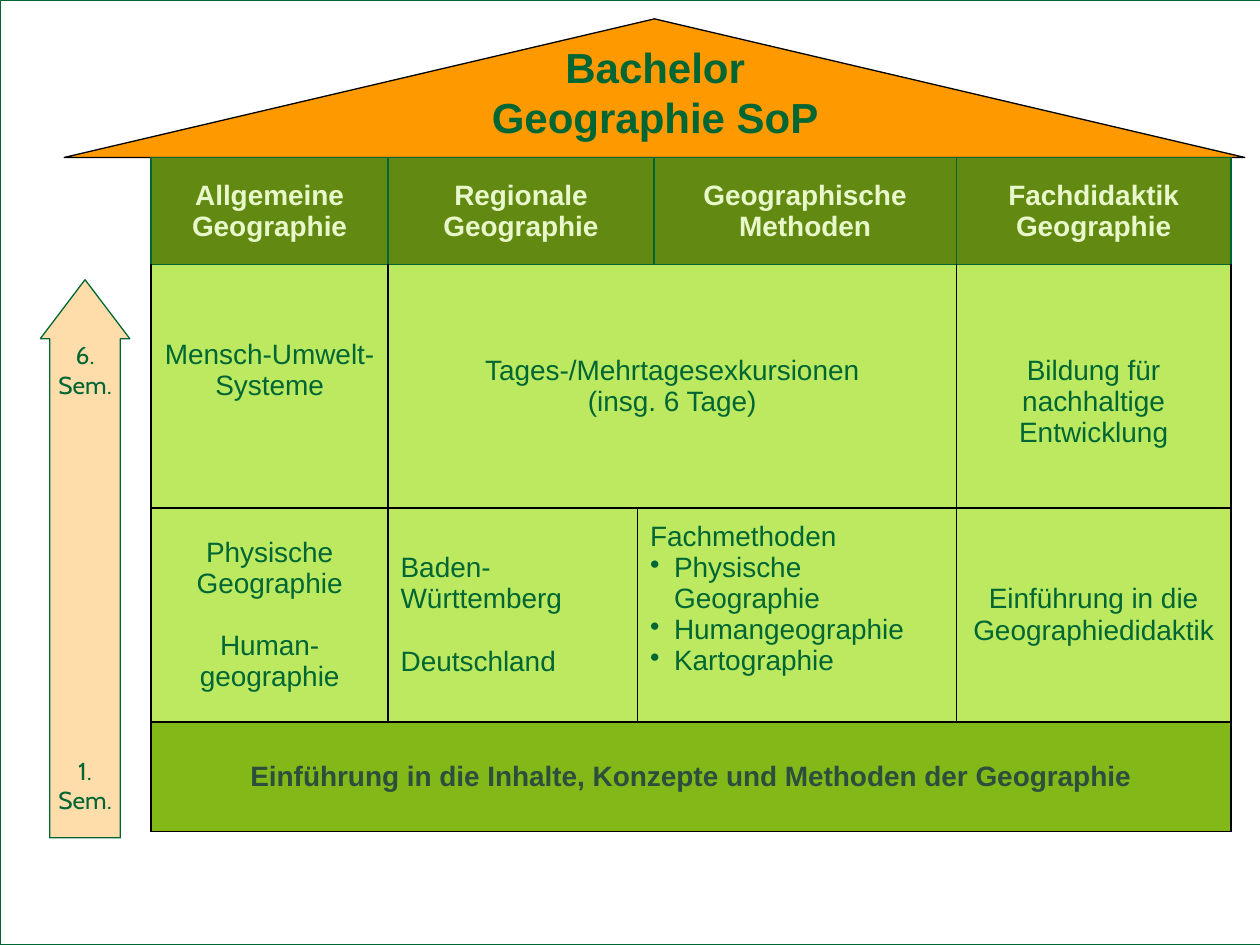
import pptx
import pptx.dml.color
import pptx.enum.shapes
import pptx.enum.text
import pptx.oxml
import pptx.oxml.ns
import pptx.util

Inches = pptx.util.Inches
Pt = pptx.util.Pt
RGBColor = pptx.dml.color.RGBColor
Align = pptx.enum.text.PP_ALIGN
Shape = pptx.enum.shapes.MSO_SHAPE

WHITE = RGBColor(0xFF, 0xFF, 0xFF)
BLACK = RGBColor(0x00, 0x00, 0x00)
GREEN = RGBColor(0x00, 0x66, 0x33)
ORANGE = RGBColor(0xFF, 0x99, 0x00)
PEACH = RGBColor(0xFF, 0xDD, 0xAB)
HEADER_FILL = RGBColor(0x62, 0x8A, 0x13)
HEADER_TEXT = RGBColor(0xE9, 0xF8, 0xCA)
MODULE_FILL = RGBColor(0xBC, 0xE9, 0x60)
BASE_FILL = RGBColor(0x83, 0xB8, 0x19)
BASE_TEXT = RGBColor(0x2C, 0x4E, 0x3D)

COLUMN_WIDTHS = [1.88, 1.98, 0.13, 2.4, 2.18]
ROW_HEIGHTS = [0.85, 1.93, 1.7, 0.87]
BLANK_LINE = 0.25


def add_box(shapes, kind, left, top, width, height, fill, line):
    shape = shapes.add_shape(kind, Inches(left), Inches(top), Inches(width), Inches(height))
    shape.shadow.inherit = False
    shape.fill.solid()
    shape.fill.fore_color.rgb = fill
    shape.line.color.rgb = line
    shape.line.width = Pt(0.75)
    return shape


def write(frame, lines, size, color, font="Arial", bold=False, align=Align.CENTER):
    for index, line in enumerate(lines):
        paragraph = frame.paragraphs[0] if index == 0 else frame.add_paragraph()
        paragraph.text = line
        paragraph.alignment = align
        paragraph.font.name = font
        paragraph.font.size = Pt(size)
        paragraph.font.bold = bold
        paragraph.font.color.rgb = color


def add_label(shapes, left, top, width, height, lines, size, font, bold=False, margin=0.0):
    frame = shapes.add_textbox(Inches(left), Inches(top), Inches(width), Inches(height)).text_frame
    frame.word_wrap = True
    frame.margin_left = frame.margin_right = Inches(margin)
    frame.margin_top = frame.margin_bottom = Inches(margin / 2)
    write(frame, lines, size, GREEN, font, bold)


def add_bullet(paragraph):
    properties = paragraph._p.get_or_add_pPr()
    properties.set("marL", str(Inches(0.19)))
    properties.set("indent", str(-Inches(0.19)))
    bullet = pptx.oxml.parse_xml(f'<a:buChar {pptx.oxml.ns.nsdecls("a")} char="•"/>')
    properties.append(bullet)


def set_borders(cell, **colors):
    properties = cell._tc.get_or_add_tcPr()
    for side in "LRTB":
        properties.append(pptx.oxml.parse_xml(
            f'<a:ln{side} {pptx.oxml.ns.nsdecls("a")} w="{Pt(1)}"><a:solidFill>'
            f'<a:srgbClr val="{colors.get(side, BLACK)}"/></a:solidFill></a:ln{side}>'))


def style_cells(table):
    fills = [HEADER_FILL, MODULE_FILL, MODULE_FILL, BASE_FILL]
    borders = [dict.fromkeys("LRTB", GREEN), {"T": GREEN}, {}, {}]
    for row, fill, colors in zip(table.rows, fills, borders):
        for cell in row.cells:
            set_borders(cell, **colors)
            cell.fill.solid()
            cell.fill.fore_color.rgb = fill
            cell.vertical_anchor = pptx.enum.text.MSO_ANCHOR.MIDDLE


def add_curriculum(shapes):
    frame = shapes.add_table(len(ROW_HEIGHTS), len(COLUMN_WIDTHS), Inches(1.2), Inches(1.25),
                             Inches(sum(COLUMN_WIDTHS)), Inches(sum(ROW_HEIGHTS)))
    table = frame.table
    for column, width in zip(table.columns, COLUMN_WIDTHS):
        column.width = Inches(width)
    for row, height in zip(table.rows, ROW_HEIGHTS):
        row.height = Inches(height)
    style_cells(table)
    for row, first, last in [(0, 1, 2), (1, 1, 3), (2, 2, 3), (3, 0, 4)]:
        table.cell(row, first).merge(table.cell(row, last))

    headers = {0: "Allgemeine", 1: "Regionale", 3: "Geographische", 4: "Fachdidaktik"}
    for column, word in headers.items():
        noun = "Methoden" if column == 3 else "Geographie"
        write(table.cell(0, column).text_frame, [f"{word} {noun}"], 16, HEADER_TEXT, bold=True)

    modules = {
        (1, 0): ["Mensch-Umwelt-Systeme"],
        (1, 1): ["Tages-/Mehrtagesexkursionen", "(insg. 6 Tage)"],
        (1, 4): ["Bildung für nachhaltige Entwicklung"],
        (2, 0): ["Physische Geographie", "Human-geographie"],
        (2, 1): ["Baden-Württemberg", "Deutschland"],
        (2, 2): ["Fachmethoden", "Physische Geographie", "Humangeographie", "Kartographie"],
        (2, 4): ["Einführung in die Geographiedidaktik"],
    }
    for (row, column), lines in modules.items():
        align = Align.LEFT if (row, column) in [(2, 1), (2, 2)] else Align.CENTER
        write(table.cell(row, column).text_frame, lines, 16, GREEN, align=align)

    for column in (0, 1):
        table.cell(2, column).text_frame.paragraphs[1].space_before = Pt(18)
    methods = table.cell(2, 2)
    for paragraph in methods.text_frame.paragraphs[1:]:
        add_bullet(paragraph)
    for cell in (table.cell(1, 0), methods):
        cell.margin_bottom = Inches(0.05 + BLANK_LINE)
    table.cell(1, 4).margin_top = Inches(0.05 + BLANK_LINE)

    foundation = "Einführung in die Inhalte, Konzepte und Methoden der Geographie"
    write(table.cell(3, 0).text_frame, [foundation], 16, BASE_TEXT, bold=True)


def add_roof(shapes):
    roof = shapes.add_group_shape().shapes
    add_box(roof, Shape.ISOSCELES_TRIANGLE, 0.51, 0.15, 9.37, 1.1, ORANGE, BLACK)
    add_label(roof, 2.76, 0.28, 4.88, 0.97, ["Bachelor", "Geographie SoP"], 24, "Arial",
              bold=True, margin=0.1)


def add_semester_arrow(shapes):
    timeline = shapes.add_group_shape().shapes
    arrow = add_box(timeline, Shape.UP_ARROW, 0.32, 2.22, 0.71, 4.43, PEACH, GREEN)
    arrow.adjustments[0] = 0.79
    arrow.adjustments[1] = 0.66
    for semester, top in [("1. Sem.", 6), ("6. Sem.", 2.7)]:
        add_label(timeline, 0.4, top, 0.55, 0.47, [semester], 14, "Cabin")


def main():
    presentation = pptx.Presentation()
    presentation.slide_width = Inches(10)
    presentation.slide_height = Inches(7.5)
    shapes = presentation.slides.add_slide(presentation.slide_layouts[6]).shapes
    add_box(shapes, Shape.RECTANGLE, 0, 0, 10.12, 7.5, WHITE, GREEN)
    add_roof(shapes)
    add_curriculum(shapes)
    add_semester_arrow(shapes)
    presentation.save("out.pptx")


if __name__ == "__main__":
    main()
